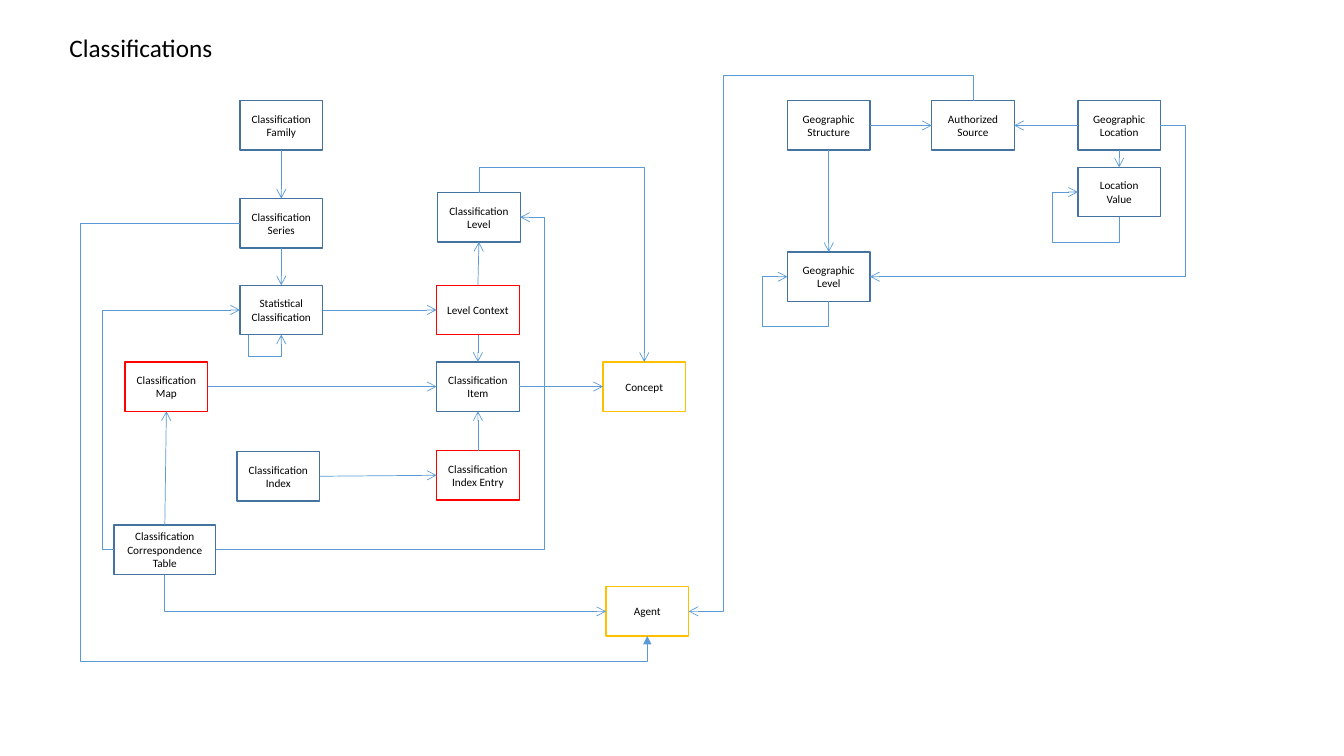
from dataclasses import dataclass

from lxml.etree import SubElement
from pptx import Presentation
from pptx.dml.color import RGBColor
from pptx.enum.shapes import MSO_CONNECTOR, MSO_SHAPE
from pptx.enum.text import MSO_ANCHOR, MSO_AUTO_SIZE, PP_ALIGN
from pptx.oxml.ns import qn
from pptx.util import Inches, Pt


@dataclass(frozen=True)
class Theme:
    font: str = "Calibri"
    text: RGBColor = RGBColor(0, 0, 0)
    blue: RGBColor = RGBColor(0x43, 0x73, 0x9E)
    red: RGBColor = RGBColor(0xFF, 0, 0)
    gold: RGBColor = RGBColor(0xFF, 0xC0, 0)
    link: RGBColor = RGBColor(0x5B, 0x9B, 0xD5)
    title_size: Pt = Pt(18)
    box_size: Pt = Pt(8)
    box_line: Pt = Pt(1)
    link_line: Pt = Pt(0.5)


THEME = Theme()
BOX_WIDTH, BOX_HEIGHT = 0.82, 0.49
WIDE_BOX = "Classification Correspondence Table"
WIDE_BOX_WIDTH = 1.01
TOP, LEFT, BOTTOM, RIGHT = range(4)

BOXES = {
    THEME.blue: {
        "Classification Family": (2.38, 1),
        "Classification Series": (2.38, 1.97),
        "Statistical Classification": (2.38, 2.83),
        "Classification Index": (2.35, 4.48),
        WIDE_BOX: (1.13, 5.21),
        "Classification Level": (4.34, 1.91),
        "Classification Item": (4.33, 3.59),
        "Geographic Structure": (7.81, 1),
        "Authorized Source": (9.24, 1),
        "Geographic Location": (10.69, 1),
        "Location Value": (10.69, 1.66),
        "Geographic Level": (7.81, 2.5),
    },
    THEME.red: {
        "Classification Map": (1.24, 3.59),
        "Level Context": (4.33, 2.83),
        "Classification Index Entry": (4.33, 4.47),
    },
    THEME.gold: {
        "Concept": (5.98, 3.59),
        "Agent": (6.01, 5.82),
    },
}

STRAIGHT_LINKS = [
    ("Classification Family", BOTTOM, "Classification Series", TOP),
    ("Classification Series", BOTTOM, "Statistical Classification", TOP),
    ("Statistical Classification", RIGHT, "Level Context", LEFT),
    ("Level Context", TOP, "Classification Level", BOTTOM),
    ("Level Context", BOTTOM, "Classification Item", TOP),
    ("Classification Map", RIGHT, "Classification Item", LEFT),
    ("Classification Item", RIGHT, "Concept", LEFT),
    ("Classification Index", RIGHT, "Classification Index Entry", LEFT),
    ("Classification Index Entry", TOP, "Classification Item", BOTTOM),
    (WIDE_BOX, TOP, "Classification Map", BOTTOM),
    ("Geographic Structure", RIGHT, "Authorized Source", LEFT),
    ("Geographic Structure", BOTTOM, "Geographic Level", TOP),
    ("Geographic Location", LEFT, "Authorized Source", RIGHT),
    ("Geographic Location", BOTTOM, "Location Value", TOP),
]

# The last item holds the lanes in inches where an elbow turns, in path order.
ELBOW_LINKS = [
    (WIDE_BOX, BOTTOM, "Agent", LEFT, []),
    (WIDE_BOX, LEFT, "Statistical Classification", LEFT, [1.01]),
    (WIDE_BOX, RIGHT, "Classification Level", RIGHT, [5.4]),
    ("Classification Series", LEFT, "Agent", BOTTOM, [0.8, 6.56]),
    ("Classification Level", TOP, "Concept", TOP, [1.66]),
    ("Authorized Source", TOP, "Agent", RIGHT, [0.75, 7.17]),
    ("Geographic Location", RIGHT, "Geographic Level", RIGHT, [11.76]),
    ("Geographic Level", BOTTOM, "Geographic Level", LEFT, [3.24, 7.56]),
    ("Location Value", BOTTOM, "Location Value", LEFT, [2.4, 10.44]),
]
SOLID_HEAD = ("Classification Series", "Agent")


def style_text(text_frame, size, alignment):
    for paragraph in text_frame.paragraphs:
        paragraph.alignment = alignment
        for run in paragraph.runs:
            run.font.name = THEME.font
            run.font.size = size
            run.font.color.rgb = THEME.text


def add_title(slide, text):
    title = slide.shapes.add_textbox(Inches(0.59), Inches(0.27), Inches(1.64), Inches(0.4))
    title.text_frame.text = text
    title.text_frame.word_wrap = False
    title.text_frame.auto_size = MSO_AUTO_SIZE.SHAPE_TO_FIT_TEXT
    style_text(title.text_frame, THEME.title_size, PP_ALIGN.LEFT)


def add_box(slide, text, left, top, color):
    width = WIDE_BOX_WIDTH if text == WIDE_BOX else BOX_WIDTH
    box = slide.shapes.add_shape(
        MSO_SHAPE.RECTANGLE, Inches(left), Inches(top), Inches(width), Inches(BOX_HEIGHT))
    box.shadow.inherit = False
    box.fill.background()
    box.line.color.rgb = color
    box.line.width = THEME.box_line
    box.text_frame.text = text
    box.text_frame.word_wrap = True
    box.text_frame.vertical_anchor = MSO_ANCHOR.MIDDLE
    style_text(box.text_frame, THEME.box_size, PP_ALIGN.CENTER)
    return box


def side_point(box, side):
    """Return the middle of one side of a box."""
    middle_x, middle_y = box.left + box.width // 2, box.top + box.height // 2
    return {
        TOP: (middle_x, box.top),
        LEFT: (box.left, middle_y),
        BOTTOM: (middle_x, box.top + box.height),
        RIGHT: (box.left + box.width, middle_y),
    }[side]


def add_link(slide, start, end, head="arrow", kind=MSO_CONNECTOR.STRAIGHT):
    link = slide.shapes.add_connector(kind, *start, *end)
    link.line.color.rgb = THEME.link
    link.line.width = THEME.link_line
    if head:
        SubElement(link.line._get_or_add_ln(), qn("a:tailEnd"), type=head)
    SubElement(link._element.spPr, qn("a:effectLst"))
    return link


def bend(link, start, end, lanes, vertical_first):
    """Turn an elbow connector at the given lanes, leaving its start along one axis."""
    spans = [end[0] - start[0], end[1] - start[1]]
    axes = [1, 0] if vertical_first else [0, 1]
    properties = link._element.spPr
    geometry = properties.find(qn("a:prstGeom"))
    geometry.set("prst", f"bentConnector{len(lanes) + 2}")
    guides = geometry.find(qn("a:avLst"))
    for number, (axis, lane) in enumerate(zip(axes, lanes), 1):
        ratio = round((Inches(lane) - start[axis]) / spans[axis] * 100000)
        SubElement(guides, qn("a:gd"), name=f"adj{number}", fmla=f"val {ratio}")
    if vertical_first:
        width, height = abs(spans[1]), abs(spans[0])
        link.left = (start[0] + end[0] - width) // 2
        link.top = (start[1] + end[1] - height) // 2
        link.width, link.height = width, height
        # A quarter turn maps the connector's own x axis to down and its y axis to left.
        transform = properties.find(qn("a:xfrm"))
        transform.set("rot", "5400000")
        transform.set("flipH", str(int(spans[1] < 0)))
        transform.set("flipV", str(int(spans[0] > 0)))


def add_statistical_loop(slide, box):
    corner = Inches(2.46), Inches(3.54)
    bottom = side_point(box, BOTTOM)
    add_link(slide, corner, (corner[0], bottom[1]), head=None)
    elbow = add_link(slide, corner, bottom, kind=MSO_CONNECTOR.ELBOW)
    bend(elbow, corner, bottom, [], vertical_first=False)


def main():
    presentation = Presentation()
    presentation.slide_width, presentation.slide_height = Inches(13.33), Inches(7.5)
    slide = presentation.slides.add_slide(presentation.slide_layouts[6])
    add_title(slide, "Classifications")
    boxes = {
        text: add_box(slide, text, left, top, color)
        for color, group in BOXES.items()
        for text, (left, top) in group.items()
    }
    for source, source_side, target, target_side in STRAIGHT_LINKS:
        link = add_link(slide, side_point(boxes[source], source_side),
                        side_point(boxes[target], target_side))
        link.begin_connect(boxes[source], source_side)
        link.end_connect(boxes[target], target_side)
    for source, source_side, target, target_side, lanes in ELBOW_LINKS:
        start = side_point(boxes[source], source_side)
        end = side_point(boxes[target], target_side)
        head = "triangle" if (source, target) == SOLID_HEAD else "arrow"
        link = add_link(slide, start, end, head, MSO_CONNECTOR.ELBOW)
        link.begin_connect(boxes[source], source_side)
        link.end_connect(boxes[target], target_side)
        bend(link, start, end, lanes, source_side in (TOP, BOTTOM))
    add_statistical_loop(slide, boxes["Statistical Classification"])
    presentation.save("out.pptx")


if __name__ == "__main__":
    main()
